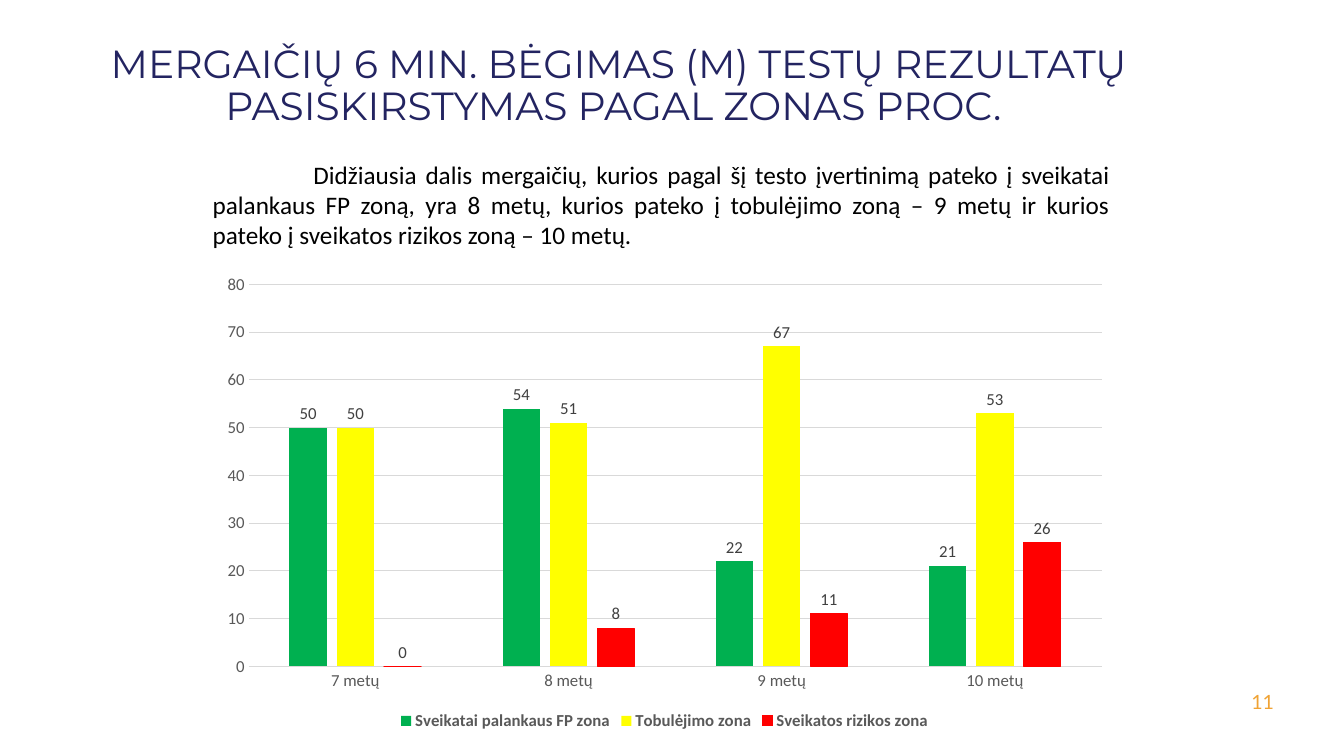
from pptx import Presentation
from pptx.chart.data import CategoryChartData
from pptx.dml.color import RGBColor
from pptx.enum.chart import XL_CHART_TYPE, XL_LABEL_POSITION, XL_LEGEND_POSITION, XL_TICK_MARK
from pptx.enum.text import MSO_ANCHOR, PP_ALIGN
from pptx.util import Cm, Pt

NAVY, ORANGE, BLACK = "232461", "F0A334", "000000"
AXIS_GREY, LABEL_GREY, LINE_GREY = "595959", "404040", "D9D9D9"

AGES = ["7 metų", "8 metų", "9 metų", "10 metų"]
ZONES = [
    ("Sveikatai palankaus FP zona", "00B050", (50, 54, 22, 21)),
    ("Tobulėjimo zona", "FFFF00", (50, 51, 67, 53)),
    ("Sveikatos rizikos zona", "FF0000", (0, 8, 11, 26)),
]


def colour(value):
    return RGBColor.from_string(value)


def style_font(font, name, size, shade, bold=False):
    font.name = name
    font.size = Pt(size)
    font.bold = bold
    font.color.rgb = colour(shade)


def style_line(line, shade):
    line.color.rgb = colour(shade)
    line.width = Pt(0.75)


def add_text(page, place, text, font_name, size, shade, align):
    box = page.shapes.add_textbox(*(Cm(length) for length in place))
    frame = box.text_frame
    frame.word_wrap = True
    frame.vertical_anchor = MSO_ANCHOR.TOP
    para = frame.paragraphs[0]
    para.alignment = align
    span = para.add_run()
    span.text = text
    style_font(span.font, font_name, size, shade)
    return para


def style_axis(axis):
    axis.major_tick_mark = XL_TICK_MARK.NONE
    axis.minor_tick_mark = XL_TICK_MARK.NONE
    style_font(axis.tick_labels.font, "Calibri", 12, AXIS_GREY)


def add_zone_chart(page, place):
    data = CategoryChartData(number_format="0")
    data.categories = AGES
    for name, _, values in ZONES:
        data.add_series(name, values)
    chart = page.shapes.add_chart(
        XL_CHART_TYPE.COLUMN_CLUSTERED, *(Cm(length) for length in place), data
    ).chart
    style_font(chart.font, "Calibri", 10, BLACK)
    chart.has_title = False

    # Axes
    ages, percent = chart.category_axis, chart.value_axis
    style_axis(ages)
    style_line(ages.format.line, LINE_GREY)
    style_axis(percent)
    percent.format.line.fill.background()
    percent.minimum_scale, percent.maximum_scale = 0, 80
    percent.major_unit = 10
    style_line(percent.major_gridlines.format.line, LINE_GREY)

    # Legend
    chart.has_legend = True
    chart.legend.position = XL_LEGEND_POSITION.BOTTOM
    chart.legend.include_in_layout = False
    style_font(chart.legend.font, "Calibri", 12, AXIS_GREY, bold=True)

    # Columns
    plot = chart.plots[0]
    plot.gap_width, plot.overlap = 219, -27
    plot.vary_by_categories = False
    for series, (_, shade, _) in zip(plot.series, ZONES):
        series.invert_if_negative = False
        series.format.fill.solid()
        series.format.fill.fore_color.rgb = colour(shade)
        labels = series.data_labels
        labels.show_value = True
        labels.position = XL_LABEL_POSITION.OUTSIDE_END
        style_font(labels.font, "Calibri", 12, LABEL_GREY)
    # The outline keeps the zero column of the risk zone visible
    style_line(plot.series[-1].format.line, ZONES[-1][1])


def main():
    deck = Presentation()
    deck.slide_width, deck.slide_height = Cm(33.87), Cm(19.05)
    page = deck.slides.add_slide(deck.slide_layouts[6])

    # Page number
    add_text(page, (31.04, 17.25, 1.32, 1.02), "11", "Lato", 14, ORANGE, PP_ALIGN.RIGHT)

    # Title
    title = add_text(
        page, (1.83, 0.99, 27.51, 3.51),
        "MERGAIČIŲ 6 MIN. BĖGIMAS (M) TESTŲ REZULTATŲ PASISKIRSTYMAS PAGAL ZONAS PROC. ",
        "Montserrat", 28, NAVY, PP_ALIGN.CENTER,
    )
    title.line_spacing = 0.9

    # Chart
    add_zone_chart(page, (5.28, 6.68, 22.94, 11.84))

    # Summary with an indented first line
    summary = add_text(
        page, (5.11, 3.89, 23.11, 2.57),
        "Didžiausia dalis mergaičių, kurios pagal šį testo įvertinimą pateko į sveikatai "
        "palankaus FP zoną, yra 8 metų, kurios pateko į tobulėjimo zoną – 9 metų ir kurios "
        "pateko į sveikatos rizikos zoną – 10 metų.",
        "Calibri", 18, BLACK, PP_ALIGN.JUSTIFY,
    )
    summary._p.get_or_add_pPr().set("indent", str(int(Cm(2.54))))

    deck.save("out.pptx")


if __name__ == "__main__":
    main()
